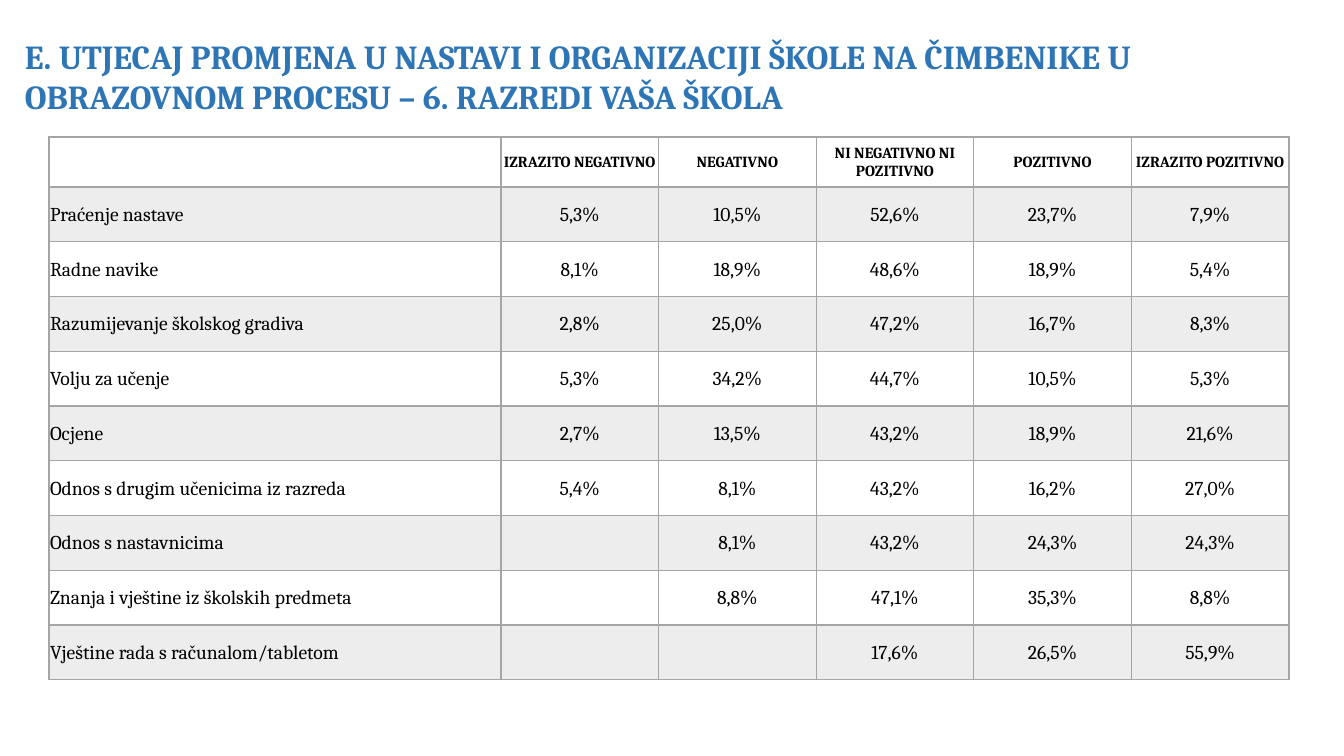
from pptx import Presentation
from pptx.dml.color import RGBColor
from pptx.enum.text import MSO_ANCHOR, MSO_AUTO_SIZE, PP_ALIGN
from pptx.oxml.ns import qn
from pptx.util import Emu, Pt
from lxml.etree import SubElement

BLUE = RGBColor(0x2E, 0x75, 0xB6)
GRAY = RGBColor(0xA5, 0xA5, 0xA5)
BLACK = RGBColor(0, 0, 0)

TITLE = ("E. UTJECAJ PROMJENA U NASTAVI I ORGANIZACIJI ŠKOLE NA ČIMBENIKE U "
         "OBRAZOVNOM PROCESU – 6. RAZREDI VAŠA ŠKOLA")
ROWS = [
    ["", "IZRAZITO NEGATIVNO", "NEGATIVNO", "NI NEGATIVNO NI POZITIVNO",
     "POZITIVNO", "IZRAZITO POZITIVNO"],
    ["Praćenje nastave", "5,3%", "10,5%", "52,6%", "23,7%", "7,9%"],
    ["Radne navike", "8,1%", "18,9%", "48,6%", "18,9%", "5,4%"],
    ["Razumijevanje školskog gradiva", "2,8%", "25,0%", "47,2%", "16,7%", "8,3%"],
    ["Volju za učenje", "5,3%", "34,2%", "44,7%", "10,5%", "5,3%"],
    ["Ocjene", "2,7%", "13,5%", "43,2%", "18,9%", "21,6%"],
    ["Odnos s drugim učenicima iz razreda", "5,4%", "8,1%", "43,2%", "16,2%", "27,0%"],
    ["Odnos s nastavnicima", "", "8,1%", "43,2%", "24,3%", "24,3%"],
    ["Znanja i vještine iz školskih predmeta", "", "8,8%", "47,1%", "35,3%", "8,8%"],
    ["Vještine rada s računalom/tabletom", "", "", "17,6%", "26,5%", "55,9%"],
]


def px(n):
    """Turn pixels into EMU."""
    return Emu(round(n * 914400 / 100.8))


class Deck:
    """Hold the style and the current slide."""

    font = "Cambria"

    def __init__(self, prs):
        """Add a blank slide to the presentation."""
        self.s = prs.slides.add_slide(prs.slide_layouts[6])

    def style(self, p, size, color, bold, align):
        """Format one paragraph."""
        p.alignment = align
        p.font.name = self.font
        p.font.size = Pt(size)
        p.font.bold = bold
        p.font.color.rgb = color

    def title(self, text, x, y, w, h):
        """Add the wrapped heading."""
        tf = self.s.shapes.add_textbox(px(x), px(y), px(w), px(h)).text_frame
        tf.word_wrap = True
        tf.auto_size = MSO_AUTO_SIZE.SHAPE_TO_FIT_TEXT
        tf.text = text
        self.style(tf.paragraphs[0], 24, BLUE, True, PP_ALIGN.LEFT)

    def borders(self, cell, top, bottom):
        """Draw the four edges of a cell, with widths in points."""
        tcPr = cell._tc.get_or_add_tcPr()
        for side, width in (("L", 1), ("R", 1), ("T", top), ("B", bottom)):
            ln = SubElement(tcPr, qn(f"a:ln{side}"), w=str(Pt(width)))
            fill = SubElement(ln, qn("a:solidFill"))
            SubElement(fill, qn("a:srgbClr"), val=str(GRAY))

    def shade(self, cell, opacity):
        """Fill a cell with translucent gray."""
        cell.fill.solid()
        cell.fill.fore_color.rgb = GRAY
        color = cell._tc.tcPr.find(qn("a:solidFill")).find(qn("a:srgbClr"))
        SubElement(color, qn("a:alpha"), val=str(opacity * 1000))

    def cell(self, cell, text, i, j):
        """Fill in and format the cell at row i, column j."""
        cell.margin_left = cell.margin_right = cell.margin_top = px(1)
        cell.margin_bottom = 0
        cell.vertical_anchor = MSO_ANCHOR.MIDDLE
        cell.text = text
        header = i == 0
        self.style(cell.text_frame.paragraphs[0], 11 if header else 14, BLACK,
                   header, PP_ALIGN.CENTER if j else PP_ALIGN.LEFT)
        self.borders(cell, 2 if i == 1 else 1, 2 if header else 1)
        if i % 2:
            self.shade(cell, 20)
        else:
            cell.fill.background()

    def table(self, rows, x, y, w, h, label_w, header_h):
        """Add a table with a label column and equal value columns."""
        n, m = len(rows), len(rows[0])
        table = self.s.shapes.add_table(n, m, px(x), px(y), px(w), px(h)).table
        table.first_row = table.horz_banding = False
        for j, col in enumerate(table.columns):
            col.width = px((w - label_w) / (m - 1) if j else label_w)
        for i, row in enumerate(table.rows):
            row.height = px((h - header_h) / (n - 1) if i else header_h)
            for j, text in enumerate(rows[i]):
                self.cell(table.cell(i, j), text, i, j)


def main():
    """Build and save the slide."""
    prs = Presentation()
    prs.slide_width, prs.slide_height = px(1344), px(756)
    deck = Deck(prs)
    deck.title(TITLE, 15, 31, 1258, 92)
    deck.table(ROWS, 49, 137, 1240, 543, label_w=452, header_h=50)
    prs.save("out.pptx")


if __name__ == "__main__":
    main()
